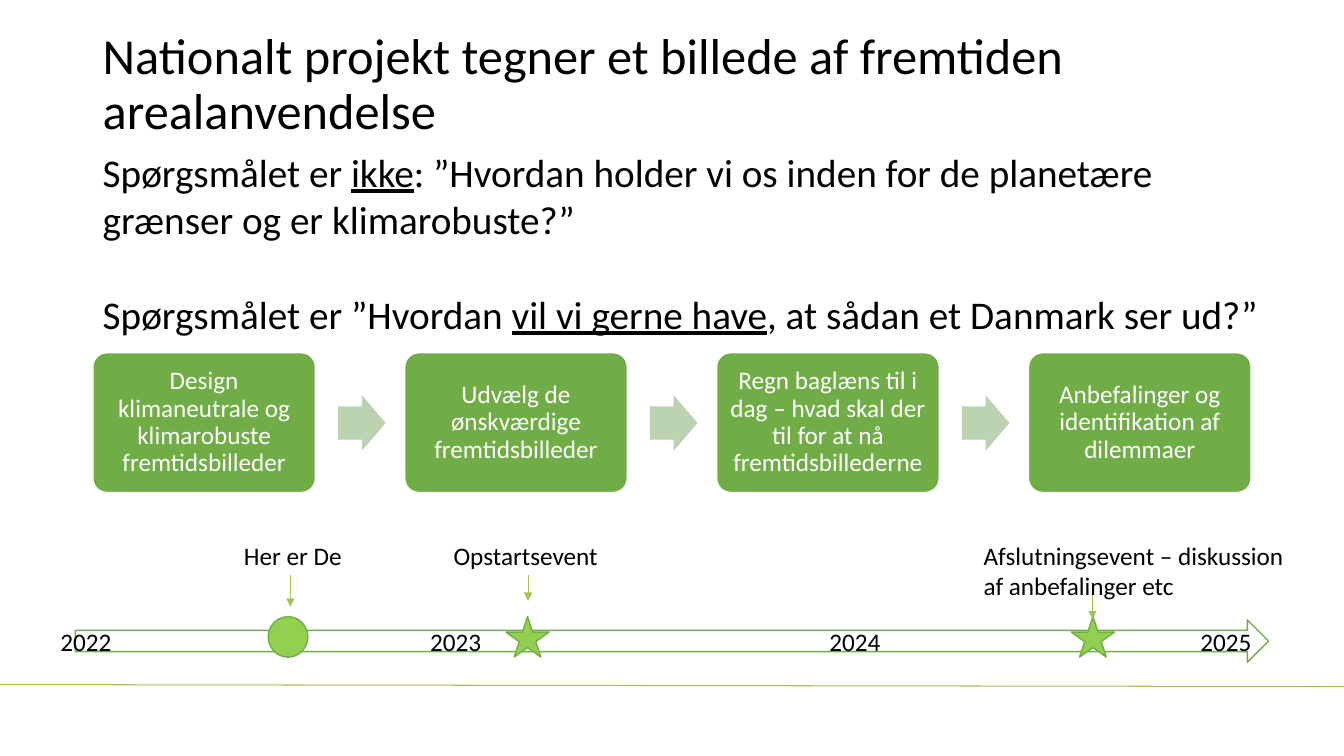
from pptx import Presentation
from pptx.dml.color import RGBColor
from pptx.enum.shapes import MSO_CONNECTOR, MSO_SHAPE
from pptx.enum.text import MSO_ANCHOR, PP_ALIGN
from pptx.oxml.ns import qn
from pptx.util import Cm, Pt
from lxml import etree

STRAIGHT = MSO_CONNECTOR.STRAIGHT
ROUNDED = MSO_SHAPE.ROUNDED_RECTANGLE
RIGHT_ARROW = MSO_SHAPE.RIGHT_ARROW
OVAL = MSO_SHAPE.OVAL
STAR = MSO_SHAPE.STAR_5_POINT
TOP, MIDDLE = MSO_ANCHOR.TOP, MSO_ANCHOR.MIDDLE
CENTER = PP_ALIGN.CENTER

COLORS = {"black": "000000", "white": "FFFFFF", "green": "70AD47",
          "pale": "BBD3B1", "lime": "92D050", "olive": "A4C355"}

STEPS = ["Design klimaneutrale og klimarobuste fremtidsbilleder",
         "Udvælg de ønskværdige fremtidsbilleder",
         "Regn baglæns til i dag – hvad skal der til for at nå fremtidsbillederne",
         "Anbefalinger og identifikation af dilemmaer"]
QUESTIONS = [
    [("Spørgsmålet er ", False), ("ikke", True),
     (": ”Hvordan holder vi os inden for de planetære grænser og er klimarobuste?”", False)],
    [("Spørgsmålet er ”Hvordan ", False), ("vil vi gerne have", True),
     (", at sådan et Danmark ser ud?”", False)],
]
YEARS = [("2022", 1.27), ("2023", 10.59), ("2024", 20.65), ("2025", 30)]
EVENTS = [
    ("Her er De", (5.9, 13.49, 3.18, 1.02), OVAL, (6.76, 1), (7.32, 14.5, 15.29)),
    ("Opstartsevent", (11.18, 13.49, 4.24, 1.02), STAR, (12.75, 1.09), (13.31, 14.5, 15.14)),
    ("Afslutningsevent – diskussion af anbefalinger etc", (24.54, 13.49, 8.1, 1.8),
     STAR, (27, 1.09), (27.53, 14.99, 15.6)),
]


class Painter:
    """Draws styled elements on one slide, with lengths in centimetres."""

    def __init__(self, page, font="Calibri"):
        self.page = page
        self.font = font

    def color(self, name):
        return RGBColor.from_string(COLORS[name])

    def style(self, font, size, color):
        font.name = self.font
        font.size = Pt(size)
        font.color.rgb = self.color(color)

    def text(self, words, area, size=18, anchor=TOP, spacing=None):
        box = self.page.shapes.add_textbox(*map(Cm, area))
        frame = box.text_frame
        frame.word_wrap = True
        frame.vertical_anchor = anchor
        frame.text = words
        para = frame.paragraphs[0]
        para.line_spacing = spacing
        for span in para.runs:
            self.style(span.font, size, "black")

    def questions(self, lines, area, size, gap):
        box = self.page.shapes.add_textbox(*map(Cm, area))
        frame = box.text_frame
        frame.word_wrap = True
        for index, spans in enumerate(lines):
            para = frame.add_paragraph() if index else frame.paragraphs[0]
            if index:
                para.space_before = Pt(gap)
            for words, underlined in spans:
                span = para.add_run()
                span.text = words
                self.style(span.font, size, "black")
                span.font.underline = underlined

    def shape(self, kind, area, fill, line=None, adjustments=()):
        shape = self.page.shapes.add_shape(kind, *map(Cm, area))
        shape.shadow.inherit = False
        shape.fill.solid()
        shape.fill.fore_color.rgb = self.color(fill)
        if line:
            shape.line.color.rgb = self.color(line)
            shape.line.width = Pt(1)
        else:
            shape.line.fill.background()
        for index, value in enumerate(adjustments):
            shape.adjustments[index] = value
        return shape

    def step(self, words, area):
        card = self.shape(ROUNDED, area, "green", "white", [0.1])
        frame = card.text_frame
        frame.word_wrap = True
        frame.vertical_anchor = MIDDLE
        frame.margin_left = frame.margin_right = Cm(0.18)
        frame.margin_top = frame.margin_bottom = Cm(0.18)
        frame.text = words
        para = frame.paragraphs[0]
        para.alignment = CENTER
        para.line_spacing = 0.9
        for span in para.runs:
            self.style(span.font, 18, "white")

    def line(self, start, end, width, arrow=False):
        line = self.page.shapes.add_connector(STRAIGHT, *map(Cm, start + end))
        line.line.color.rgb = self.color("olive")
        line.line.width = Pt(width)
        if arrow:
            etree.SubElement(line.line._get_or_add_ln(), qn("a:tailEnd"), type="triangle")
        etree.SubElement(line._element.spPr, qn("a:effectLst"))


def main():
    deck = Presentation()
    deck.slide_width, deck.slide_height = Cm(33.87), Cm(19.05)
    painter = Painter(deck.slides.add_slide(deck.slide_layouts[6]))

    painter.line((0, 17.25), (33.87, 17.3), 0.75)
    painter.text("Nationalt projekt tegner et billede af fremtiden arealanvendelse",
                 (2.34, 1.02, 30.91, 2.29), 36, MIDDLE, 0.9)

    for index, words in enumerate(STEPS):
        left = 2.34 + 7.86 * index
        painter.step(words, (left, 8.89, 5.61, 3.52))
        if index < len(STEPS) - 1:
            painter.shape(RIGHT_ARROW, (left + 6.18, 9.96, 1.2, 1.4), "pale",
                          adjustments=[0.6, 0.5])

    painter.questions(QUESTIONS, (2.34, 3.61, 29.67, 6.83), 28, 34)

    painter.shape(RIGHT_ARROW, (1.9, 15.62, 30.07, 1.07), "white", "green")
    for year, left in YEARS:
        painter.text(year, (left, 15.67, 2.62, 1.02))
    for label, area, marker, (left, width), (x, top, bottom) in EVENTS:
        painter.shape(marker, (left, 15.54, width, 1.02), "lime", "green")
        painter.text(label, area)
        painter.line((x, top), (x, bottom), 0.5, arrow=True)

    deck.save("out.pptx")


if __name__ == "__main__":
    main()
